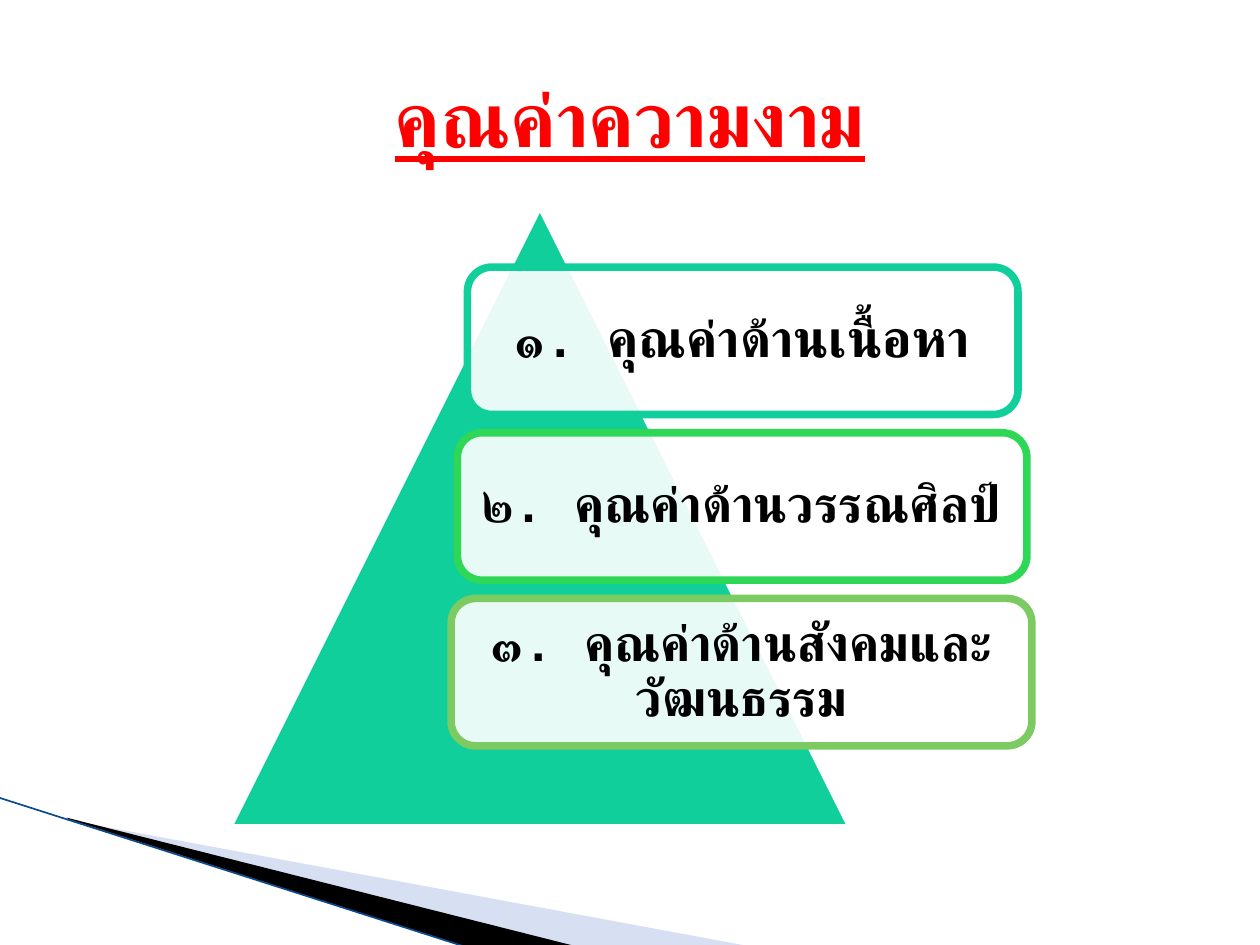
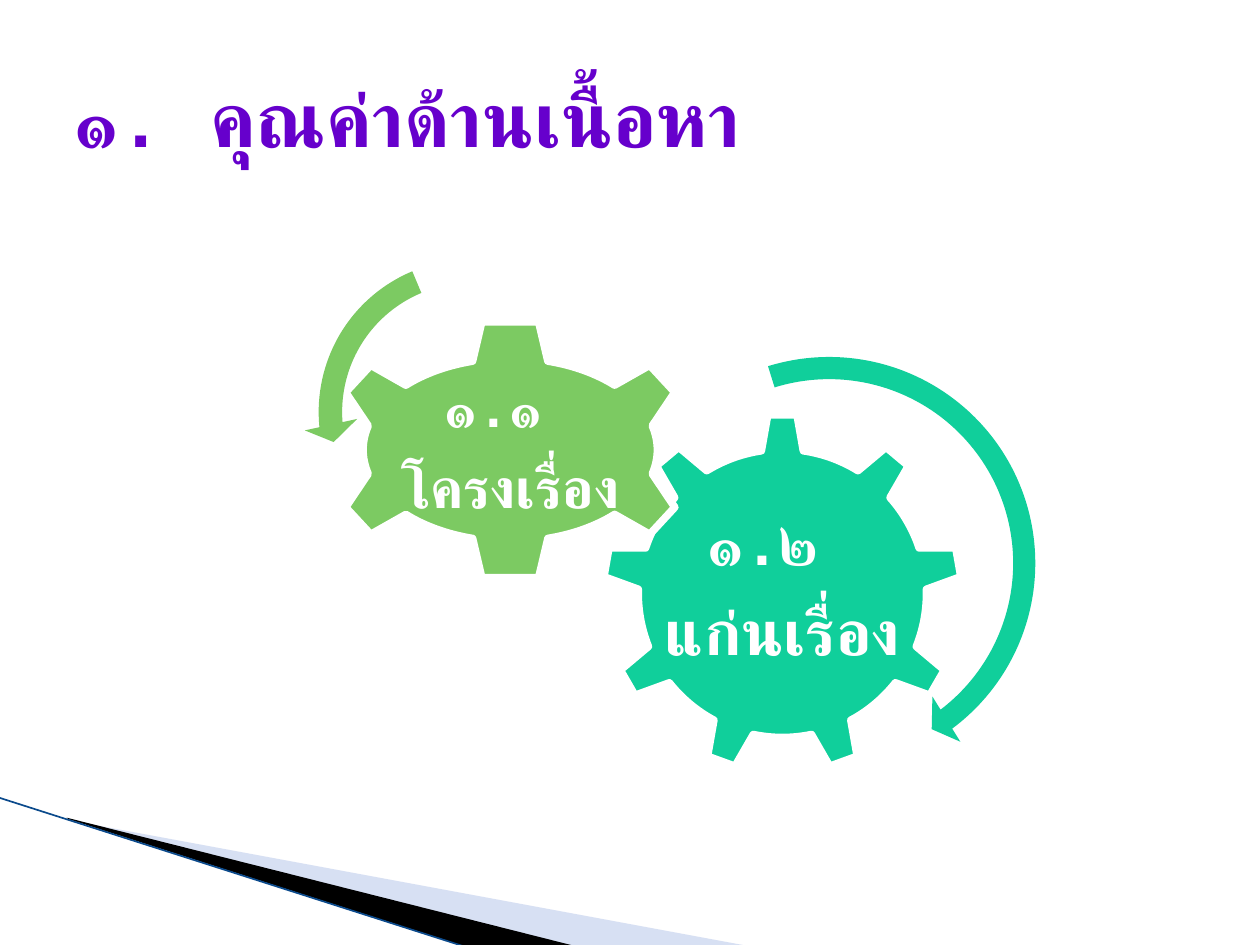
from dataclasses import dataclass

from lxml import etree
from pptx import Presentation
from pptx.dml.color import RGBColor
from pptx.enum.shapes import MSO_CONNECTOR, MSO_SHAPE
from pptx.enum.text import MSO_ANCHOR, PP_ALIGN
from pptx.oxml.ns import qn
from pptx.util import Inches, Pt

TRIANGLE = MSO_SHAPE.ISOSCELES_TRIANGLE
ROUND_RECT = MSO_SHAPE.ROUNDED_RECTANGLE
GEAR_6, GEAR_9 = MSO_SHAPE.GEAR_6, MSO_SHAPE.GEAR_9
ARROW, LEFT_ARROW = MSO_SHAPE.CIRCULAR_ARROW, MSO_SHAPE.LEFT_CIRCULAR_ARROW
STRAIGHT = MSO_CONNECTOR.STRAIGHT
LEFT, CENTER = PP_ALIGN.LEFT, PP_ALIGN.CENTER
MIDDLE = MSO_ANCHOR.MIDDLE

FONT = "Courier New"
BORDER = 4.33
COLORS = {
    "white": "FFFFFF",
    "black": "000000",
    "teal": "10CF9B",
    "green": "2FD757",
    "lime": "7CCA62",
    "red": "FF0000",
    "purple": "6600CC",
    "pale_blue": "9DB2E1",
    "edge_blue": "0B4A8C",
}


@dataclass(frozen=True)
class Box:
    left: float
    width: float
    size: float
    color: str
    text: str


@dataclass(frozen=True)
class Gear:
    kind: int
    at: tuple[float, float, float, float]
    color: str
    size: float
    lines: tuple[str, ...]


@dataclass(frozen=True)
class Arc:
    kind: int
    at: tuple[float, float, float, float]
    color: str
    adjustments: tuple[float, ...]


BOXES = (
    Box(3.71, 4.37, 30, "teal", "๑. คุณค่าด้านเนื้อหา"),
    Box(3.63, 4.52, 29, "green", "๒. คุณค่าด้านวรรณศิลป์"),
    Box(3.58, 4.61, 29, "lime", "๓. คุณค่าด้านสังคมและวัฒนธรรม"),
)
BOX_TOP, BOX_HEIGHT, BOX_STEP = 2.12, 1.17, 1.315

GEARS = (
    Gear(GEAR_9, (4.78, 3.28, 2.86, 2.86), "teal", 36, ("๑.๒ ", "แก่นเรื่อง")),
    Gear(GEAR_6, (2.57, 2.53, 2.96, 2.08), "lime", 32, ("๑.๑ ", "โครงเรื่อง")),
)
ARCS = (
    Arc(ARROW, (4.82, 2.71, 3.52, 3.52), "teal", (0.05, 3.13, 31.83, 151.67, 0.06)),
    Arc(LEFT_ARROW, (2.41, 1.94, 2.66, 2.66), "lime", (0.07, 4.3, 104.89, 148.38, 0.08)),
)


def rgb(name: str) -> RGBColor:
    return RGBColor.from_string(COLORS[name])


def paint(sp, fill: str, line: str | None = None, opacity: int = 100) -> None:
    sp.shadow.inherit = False
    sp.fill.solid()
    sp.fill.fore_color.rgb = rgb(fill)
    if opacity < 100:
        color = sp._element.spPr.find(qn("a:solidFill"))[0]
        etree.SubElement(color, qn("a:alpha"), val=str(opacity * 1000))
    if line:
        sp.line.color.rgb = rgb(line)
        sp.line.width = Pt(BORDER)
    else:
        sp.line.fill.background()


def add_preset(s, kind: int, at: tuple[float, ...], fill: str,
               line: str | None = None, opacity: int = 100):
    sp = s.shapes.add_shape(kind, *(Inches(v) for v in at))
    paint(sp, fill, line, opacity)
    return sp


def add_run(p, text: str, size: float, color: str, underline: bool = False) -> None:
    r = p.add_run()
    r.text = text
    r.font.size = Pt(size)
    r.font.bold = True
    if underline:
        r.font.underline = True
    r.font.color.rgb = rgb(color)
    r.font.name = FONT
    # Thai letters take the complex-script font
    etree.SubElement(r._r.get_or_add_rPr(), qn("a:cs"), typeface=FONT)


def write_label(sp, lines: tuple[str, ...], size: float, color: str,
                inset: float, wrap: bool) -> None:
    tf = sp.text_frame
    tf.word_wrap = wrap
    tf.vertical_anchor = MIDDLE
    tf.margin_left = tf.margin_right = Inches(inset)
    tf.margin_top = tf.margin_bottom = Inches(inset)
    for i, text in enumerate(lines):
        p = tf.add_paragraph() if i else tf.paragraphs[0]
        p.alignment = CENTER
        p.line_spacing = 0.9
        p.space_after = Pt(round(size * 0.35, 1))
        add_run(p, text, size, color)


def add_title(s, text: str, color: str, align, underline: bool = False) -> None:
    tb = s.shapes.add_textbox(Inches(0.5), Inches(0.3), Inches(9), Inches(1.25))
    tf = tb.text_frame
    tf.word_wrap = True
    tf.vertical_anchor = MIDDLE
    p = tf.paragraphs[0]
    p.alignment = align
    add_run(p, text, 44, color, underline)


def add_sliver(s, points: tuple[tuple[float, float], ...], color: str,
               opacity: int = 100) -> None:
    start, *rest = [(Inches(x), Inches(y)) for x, y in points]
    fb = s.shapes.build_freeform(*start)
    fb.add_line_segments(rest)
    paint(fb.convert_to_shape(), color, opacity=opacity)


def add_corner_band(s) -> None:
    add_sliver(s, ((0.55, 6.51), (5.95, 7.51), (4.56, 7.51), (0.55, 6.5)), "pale_blue", 40)
    add_sliver(s, ((0.53, 6.49), (4.57, 7.51), (3.72, 7.52), (0.54, 6.5)), "black")
    edge = s.shapes.add_connector(STRAIGHT, Inches(-0.01), Inches(6.33),
                                  Inches(3.71), Inches(7.52))
    edge.line.color.rgb = rgb("edge_blue")
    edge.line.width = Pt(0.95)
    etree.SubElement(edge._element.spPr, qn("a:effectLst"))


def new_slide(prs):
    s = prs.slides.add_slide(prs.slide_layouts[6])
    add_corner_band(s)
    return s


def build_values_slide(prs) -> None:
    s = new_slide(prs)
    # Pyramid with three stacked boxes
    add_preset(s, TRIANGLE, (1.81, 1.62, 4.95, 4.95), "teal", "white")
    for i, box in enumerate(BOXES):
        at = (box.left, BOX_TOP + i * BOX_STEP, box.width, BOX_HEIGHT)
        sp = add_preset(s, ROUND_RECT, at, "white", box.color, 90)
        write_label(sp, (box.text,), box.size, "black", 0.06, True)
    add_title(s, "คุณค่าความงาม", "red", CENTER, underline=True)


def build_content_slide(prs) -> None:
    s = new_slide(prs)
    # Meshing gears and their turning arrows
    for gear in GEARS:
        sp = add_preset(s, gear.kind, gear.at, gear.color, "white")
        write_label(sp, gear.lines, gear.size, "white", 0.05, False)
    for arc in ARCS:
        sp = add_preset(s, arc.kind, arc.at, arc.color)
        for i, value in enumerate(arc.adjustments):
            sp.adjustments[i] = value
    add_title(s, "๑. คุณค่าด้านเนื้อหา", "purple", LEFT)


def main() -> None:
    prs = Presentation()
    prs.slide_width, prs.slide_height = Inches(10), Inches(7.5)
    build_values_slide(prs)
    build_content_slide(prs)
    prs.save("out.pptx")


if __name__ == "__main__":
    main()
